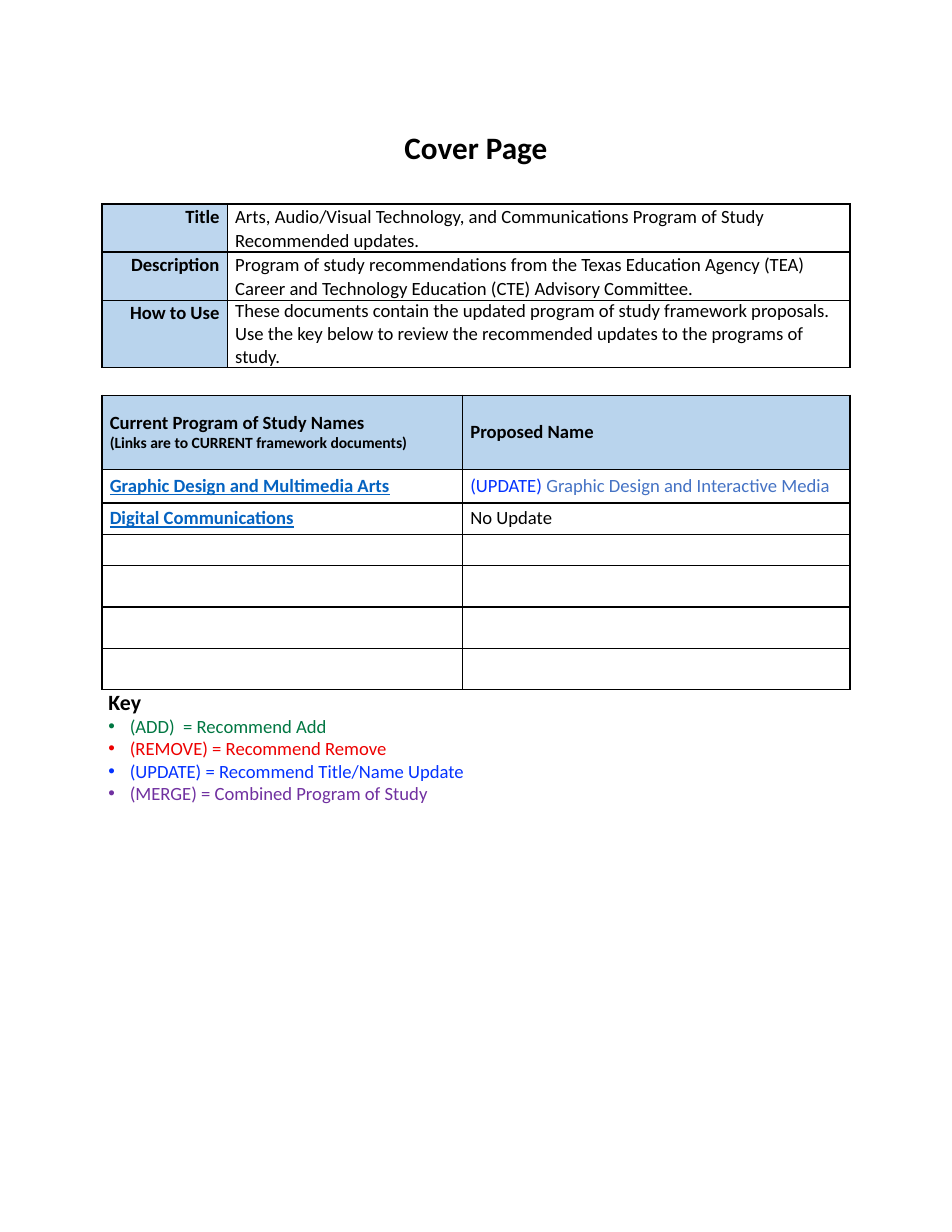
"""Build the cover page with its summary table, program table and key."""
from dataclasses import dataclass
from typing import Optional

from lxml.etree import SubElement
from pptx import Presentation
from pptx.dml.color import RGBColor
from pptx.enum.text import MSO_ANCHOR, PP_ALIGN
from pptx.oxml.ns import qn
from pptx.util import Inches, Pt

COLORS = {
    "black": "000000", "white": "FFFFFF", "label": "BDD6EE", "header": "B9D4ED",
    "link": "0563C1", "proposed": "4472C4", "add": "007742", "remove": "ED0000",
    "update": "0432FF", "merge": "7030A0",
}
FONT = "Calibri"
PAGE_WIDTH, PAGE_HEIGHT = Inches(8.5), Inches(11)
TABLE_LEFT = 10.71
CELL_MARGIN = 0.82
BULLET_INDENT = 2.24


@dataclass(frozen=True)
class Piece:
    text: str
    color: str = "black"
    size: float = 12
    bold: bool = False
    underline: bool = False


@dataclass(frozen=True)
class Line:
    pieces: tuple[Piece, ...]
    align: PP_ALIGN = PP_ALIGN.LEFT
    spacing: Optional[float] = None
    bullet: bool = False


@dataclass(frozen=True)
class Cell:
    lines: tuple[Line, ...] = ()
    fill: str = "white"
    anchor: MSO_ANCHOR = MSO_ANCHOR.MIDDLE


def across(share: float) -> int:
    """Turn a percentage of the page width into a length."""
    return round(PAGE_WIDTH * share / 100)


def down(share: float) -> int:
    """Turn a percentage of the page height into a length."""
    return round(PAGE_HEIGHT * share / 100)


def rgb(name: str) -> RGBColor:
    """Look up a named colour."""
    return RGBColor.from_string(COLORS[name])


def write_lines(text_frame, lines: tuple[Line, ...]) -> None:
    """Fill a text frame with paragraphs, run by run."""
    for index, line in enumerate(lines):
        paragraph = text_frame.paragraphs[0] if index == 0 else text_frame.add_paragraph()
        paragraph.alignment = line.align
        if line.spacing:
            paragraph.line_spacing = line.spacing
        if line.bullet:
            properties = paragraph._p.get_or_add_pPr()
            properties.set("marL", str(across(BULLET_INDENT)))
            properties.set("indent", str(-across(BULLET_INDENT)))
            SubElement(properties, qn("a:buFont"), typeface="Arial")
            SubElement(properties, qn("a:buChar"), char="•")
        for piece in line.pieces:
            run = paragraph.add_run()
            run.text = piece.text
            run.font.name = FONT
            run.font.size = Pt(piece.size)
            run.font.bold = piece.bold
            run.font.underline = piece.underline
            run.font.color.rgb = rgb(piece.color)


def add_text(slide, left: float, top: float, width: float, height: float,
             lines: tuple[Line, ...], anchor: MSO_ANCHOR = MSO_ANCHOR.TOP) -> None:
    """Add a wrapping text box."""
    shape = slide.shapes.add_textbox(across(left), down(top), across(width), down(height))
    shape.text_frame.word_wrap = True
    shape.text_frame.vertical_anchor = anchor
    write_lines(shape.text_frame, lines)


def add_borders(table_cell) -> None:
    """Draw a thin black line on all sides of a cell."""
    properties = table_cell._tc.get_or_add_tcPr()
    for side in ("lnL", "lnR", "lnT", "lnB"):
        border = SubElement(properties, qn(f"a:{side}"), w=str(Pt(1)))
        fill = SubElement(border, qn("a:solidFill"))
        SubElement(fill, qn("a:srgbClr"), val=COLORS["black"])


def add_grid(slide, top: float, columns: tuple[float, ...], rows: tuple[float, ...],
             cells: list[tuple[Cell, ...]]) -> None:
    """Add a bordered table whose sizes are shares of the page."""
    table = slide.shapes.add_table(
        len(rows), len(columns), across(TABLE_LEFT), down(top),
        across(sum(columns)), down(sum(rows))).table
    table.first_row = table.horz_banding = False
    for column, width in zip(table.columns, columns):
        column.width = across(width)
    for row, height, contents in zip(table.rows, rows, cells):
        row.height = down(height)
        for table_cell, content in zip(row.cells, contents):
            table_cell.margin_left = table_cell.margin_right = across(CELL_MARGIN)
            table_cell.margin_top = table_cell.margin_bottom = 0
            table_cell.vertical_anchor = content.anchor
            add_borders(table_cell)
            table_cell.fill.solid()
            table_cell.fill.fore_color.rgb = rgb(content.fill)
            write_lines(table_cell.text_frame, content.lines)
            if not content.lines:
                paragraph = table_cell.text_frame.paragraphs[0]
                SubElement(paragraph._p, qn("a:endParaRPr"), sz="1200")


def summary_row(label: str, text: str, fill: str = "label",
                spacing: Optional[float] = 1.07) -> tuple[Cell, Cell]:
    """Pair a shaded label with its description."""
    label_line = Line((Piece(label, bold=True),), PP_ALIGN.RIGHT, 1.07)
    return (Cell((label_line,), fill, MSO_ANCHOR.TOP),
            Cell((Line((Piece(text),), spacing=spacing),), anchor=MSO_ANCHOR.TOP))


def program_row(name: str, *proposal: Piece) -> tuple[Cell, Cell]:
    """Pair a current program name with its proposal."""
    link = Piece(name, "link", bold=True, underline=True)
    return Cell((Line((link,)),)), Cell((Line(proposal),))


def main() -> None:
    """Build and save the page."""
    presentation = Presentation()
    presentation.slide_width, presentation.slide_height = PAGE_WIDTH, PAGE_HEIGHT
    slide = presentation.slides.add_slide(presentation.slide_layouts[6])

    title = Line((Piece("Cover Page", size=20, bold=True),), PP_ALIGN.CENTER)
    add_text(slide, 0, 9.64, 100, 4.55, (title,), MSO_ANCHOR.MIDDLE)

    add_grid(slide, 16.55, (13.18, 65.41), (3.91, 3.91, 5.45), [
        summary_row("Title", "Arts, Audio/Visual Technology, and Communications "
                    "Program of Study Recommended updates."),
        summary_row("Description", "Program of study recommendations from the Texas Education "
                    "Agency (TEA) Career and Technology Education (CTE) Advisory Committee."),
        summary_row("How to Use", "These documents contain the updated program of study "
                    "framework proposals. Use the key below to review the recommended "
                    "updates to the programs of study.", "header", None),
    ])

    key = (("(ADD)  = Recommend Add", "add"),
           ("(REMOVE) = Recommend Remove", "remove"),
           ("(UPDATE) = Recommend Title/Name Update", "update"),
           ("(MERGE) = Combined Program of Study", "merge"))
    key_lines = tuple(Line((Piece(text, color),), bullet=True) for text, color in key)
    heading = Line((Piece("Key", size=14, bold=True),))
    add_text(slide, 10.24, 55.45, 67.06, 10.36, (heading, *key_lines))

    current = (Line((Piece("Current Program of Study Names", bold=True),)),
               Line((Piece("(Links are to CURRENT framework documents)", size=10, bold=True),)))
    proposed = (Line((Piece("Proposed Name", bold=True),)),)
    add_grid(slide, 32.09, (37.88, 40.71), (6, 2.73, 2.55, 2.55, 3.36, 3.36, 3.36), [
        (Cell(current, "header"), Cell(proposed, "header")),
        program_row("Graphic Design and Multimedia Arts", Piece("(UPDATE) ", "update"),
                    Piece("Graphic Design and Interactive Media", "proposed")),
        program_row("Digital Communications", Piece("No Update")),
        *[(Cell(), Cell())] * 4,
    ])
    presentation.save("out.pptx")


if __name__ == "__main__":
    main()
